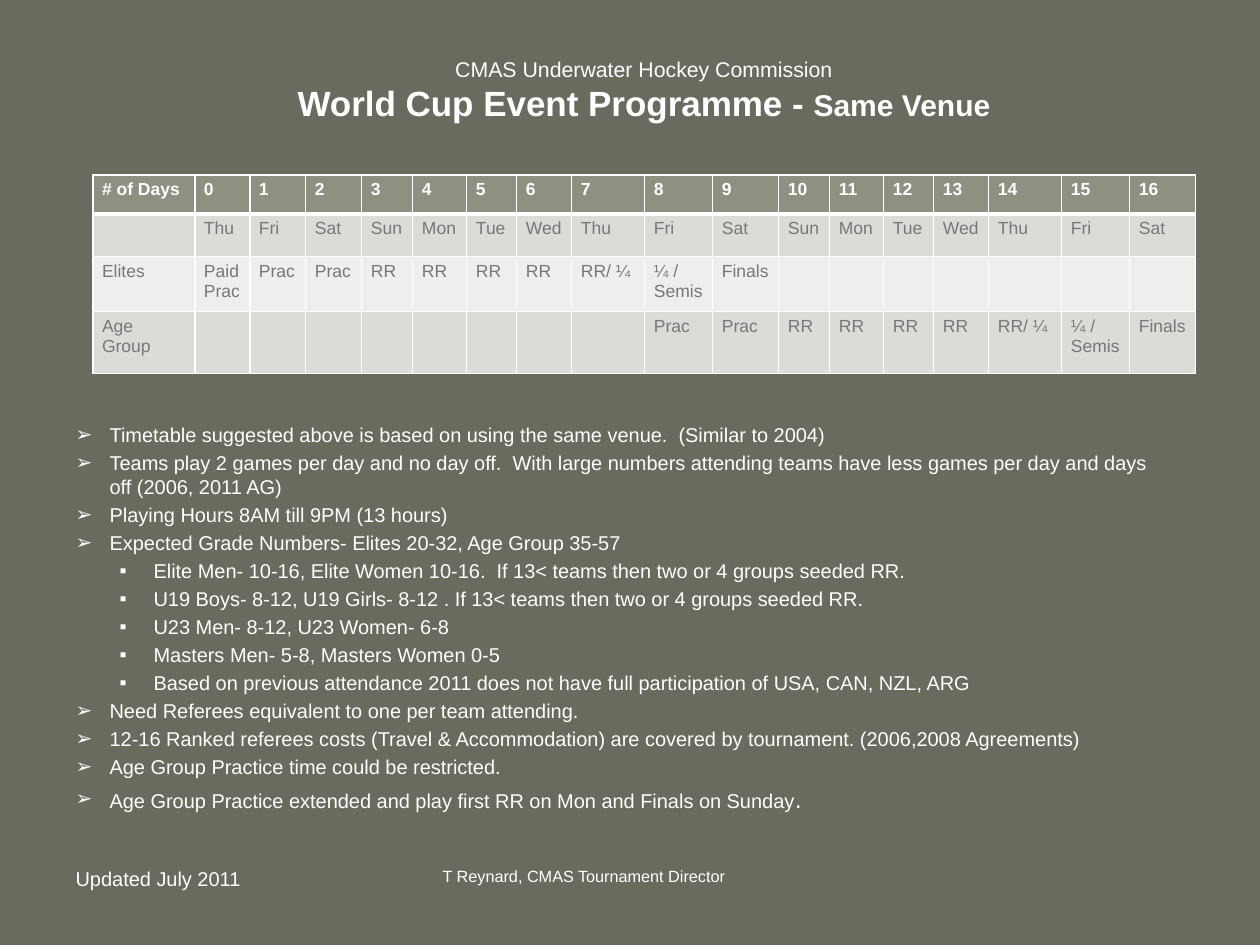
import pptx
import pptx.dml.color
import pptx.enum.shapes
import pptx.enum.text
import pptx.oxml
import pptx.oxml.ns
import pptx.util

PX = 914400 // 90
FONT = "Arial"
COLORS = {
    "background": "686B5D",
    "white": "FFFFFF",
    "header": "909082",
    "dark_band": "DBDBD8",
    "light_band": "EEEEED",
    "cell_text": "777777",
}

DAY_WIDTHS = [51, 54, 50, 55, 73, 68, 66]
COLUMN_WIDTHS = [102, 55, 56, 56] + DAY_WIDTHS * 2
ROW_HEIGHTS = [39, 43, 55, 62]
ROW_FILLS = ["header", "dark_band", "light_band", "dark_band"]
WEEK = ["Sun", "Mon", "Tue", "Wed", "Thu", "Fri", "Sat"]
GAMES = ["RR"] * 4 + ["RR/ ¼ ", "¼ /\nSemis", "Finals"]
PROGRAMME = [
    ["# of Days"] + [str(day) for day in range(17)],
    ["", "Thu", "Fri", "Sat"] + WEEK * 2,
    ["Elites", "Paid\vPrac", "Prac", "Prac"] + GAMES + [""] * 7,
    ["Age Group"] + [""] * 8 + ["Prac", "Prac"] + GAMES,
]

BULLETS = [("➢", 34), ("▪", 78)]
HANGING = 34
NOTES = [
    (0, "Timetable suggested above is based on using the same venue.  (Similar to 2004)"),
    (0, "Teams play 2 games per day and no day off.  With large numbers attending "
        "teams have less games per day and days off (2006, 2011 AG)"),
    (0, "Playing Hours 8AM till 9PM (13 hours)"),
    (0, "Expected Grade Numbers- Elites 20-32, Age Group 35-57"),
    (1, "Elite Men- 10-16, Elite Women 10-16.  If 13< teams then two or 4 groups seeded RR."),
    (1, "U19 Boys- 8-12, U19 Girls- 8-12 . If 13< teams then two or 4 groups seeded RR."),
    (1, "U23 Men- 8-12, U23 Women- 6-8"),
    (1, "Masters Men- 5-8, Masters Women 0-5"),
    (1, "Based on previous attendance 2011 does not have full participation of "
        "USA, CAN, NZL, ARG"),
    (0, "Need Referees equivalent to one per team attending."),
    (0, "12-16 Ranked referees costs (Travel & Accommodation) are covered by "
        "tournament. (2006,2008 Agreements)"),
    (0, "Age Group Practice time could be restricted."),
    (0, "Age Group Practice extended and play first RR on Mon and Finals on Sunday"),
]


def px(*lengths):
    return [length * PX for length in lengths]


def rgb(name):
    return pptx.dml.color.RGBColor.from_string(COLORS[name])


def format_font(font, size, color="white", bold=False):
    font.name = FONT
    font.size = pptx.util.Pt(size)
    font.bold = bold
    font.color.rgb = rgb(color)


def add_run(paragraph, text, size, bold=False):
    run = paragraph.add_run()
    run.text = text
    format_font(run.font, size, bold=bold)


def add_text_box(slide, box):
    text_frame = slide.shapes.add_textbox(*px(*box)).text_frame
    text_frame.word_wrap = True
    text_frame.margin_left = text_frame.margin_right = pptx.util.Inches(0.14)
    text_frame.margin_top = text_frame.margin_bottom = pptx.util.Inches(0.07)
    return text_frame


def add_title(slide):
    shape = slide.shapes.add_shape(
        pptx.enum.shapes.MSO_SHAPE.FLOWCHART_PROCESS, *px(162, 47, 964, 86))
    shape.shadow.inherit = False
    shape.fill.background()
    shape.line.fill.background()
    text_frame = shape.text_frame
    text_frame.word_wrap = False
    text_frame.vertical_anchor = pptx.enum.text.MSO_ANCHOR.MIDDLE
    organiser, event = text_frame.paragraphs[0], text_frame.add_paragraph()
    organiser.alignment = event.alignment = pptx.enum.text.PP_ALIGN.CENTER
    add_run(organiser, "CMAS Underwater Hockey Commission", 17)
    add_run(event, "World Cup Event Programme - ", 28, bold=True)
    add_run(event, "Same Venue", 24, bold=True)


def set_bullet(paragraph, level):
    character, margin = BULLETS[level]
    paragraph.level = level
    properties = paragraph._p.get_or_add_pPr()
    properties.set("marL", str(margin * PX))
    properties.set("indent", str(-HANGING * PX))
    for xml in (f'<a:buFont {pptx.oxml.ns.nsdecls("a")} typeface="{FONT}"/>',
                f'<a:buChar {pptx.oxml.ns.nsdecls("a")} char="{character}"/>'):
        properties.append(pptx.oxml.parse_xml(xml))


def add_notes(slide):
    text_frame = add_text_box(slide, (63, 416, 1120, 428))
    for index, (level, text) in enumerate(NOTES):
        paragraph = text_frame.add_paragraph() if index else text_frame.paragraphs[0]
        set_bullet(paragraph, level)
        if index:
            paragraph.space_before = pptx.util.Pt(3.2)
        add_run(paragraph, text, 16)
    add_run(paragraph, ".", 20)
    paragraph.space_before = pptx.util.Pt(4)


def add_footer(slide, box, text, size):
    paragraph = add_text_box(slide, box).paragraphs[0]
    add_run(paragraph, text, size)


def set_borders(cell, top, bottom):
    """White borders, one point wide at the sides."""
    properties = cell._tc.get_or_add_tcPr()
    for side, width in (("L", 1), ("R", 1), ("T", top), ("B", bottom)):
        properties.append(pptx.oxml.parse_xml(
            f'<a:ln{side} {pptx.oxml.ns.nsdecls("a")} w="{pptx.util.Pt(width)}">'
            f'<a:solidFill><a:srgbClr val="{COLORS["white"]}"/></a:solidFill>'
            f'</a:ln{side}>'))


def fill_cell(cell, text, row_index):
    is_header = row_index == 0
    set_borders(cell, top=3 if row_index == 1 else 1, bottom=3 if is_header else 1)
    cell.fill.solid()
    cell.fill.fore_color.rgb = rgb(ROW_FILLS[row_index])
    cell.text_frame.text = text
    for paragraph in cell.text_frame.paragraphs:
        paragraph.alignment = pptx.enum.text.PP_ALIGN.LEFT
        format_font(paragraph.font, 14, "white" if is_header else "cell_text", is_header)
        for run in paragraph.runs:
            format_font(run.font, 14, "white" if is_header else "cell_text", is_header)


def add_programme(slide):
    table = slide.shapes.add_table(
        len(ROW_HEIGHTS), len(COLUMN_WIDTHS),
        *px(93, 175, sum(COLUMN_WIDTHS), sum(ROW_HEIGHTS))).table
    for column, width in zip(table.columns, COLUMN_WIDTHS):
        column.width = width * PX
    for row_index, (row, height) in enumerate(zip(table.rows, ROW_HEIGHTS)):
        row.height = height * PX
        for cell, text in zip(row.cells, PROGRAMME[row_index]):
            fill_cell(cell, text, row_index)


def main():
    presentation = pptx.Presentation()
    presentation.slide_width, presentation.slide_height = px(1260, 945)
    slide = presentation.slides.add_slide(presentation.slide_layouts[6])
    slide.background.fill.solid()
    slide.background.fill.fore_color.rgb = rgb("background")
    add_title(slide)
    add_notes(slide)
    add_footer(slide, (63, 860, 294, 66), "Updated July 2011", 16)
    add_footer(slide, (430, 860, 399, 66), "T Reynard, CMAS Tournament Director", 13)
    add_programme(slide)
    presentation.save("out.pptx")


if __name__ == "__main__":
    main()
